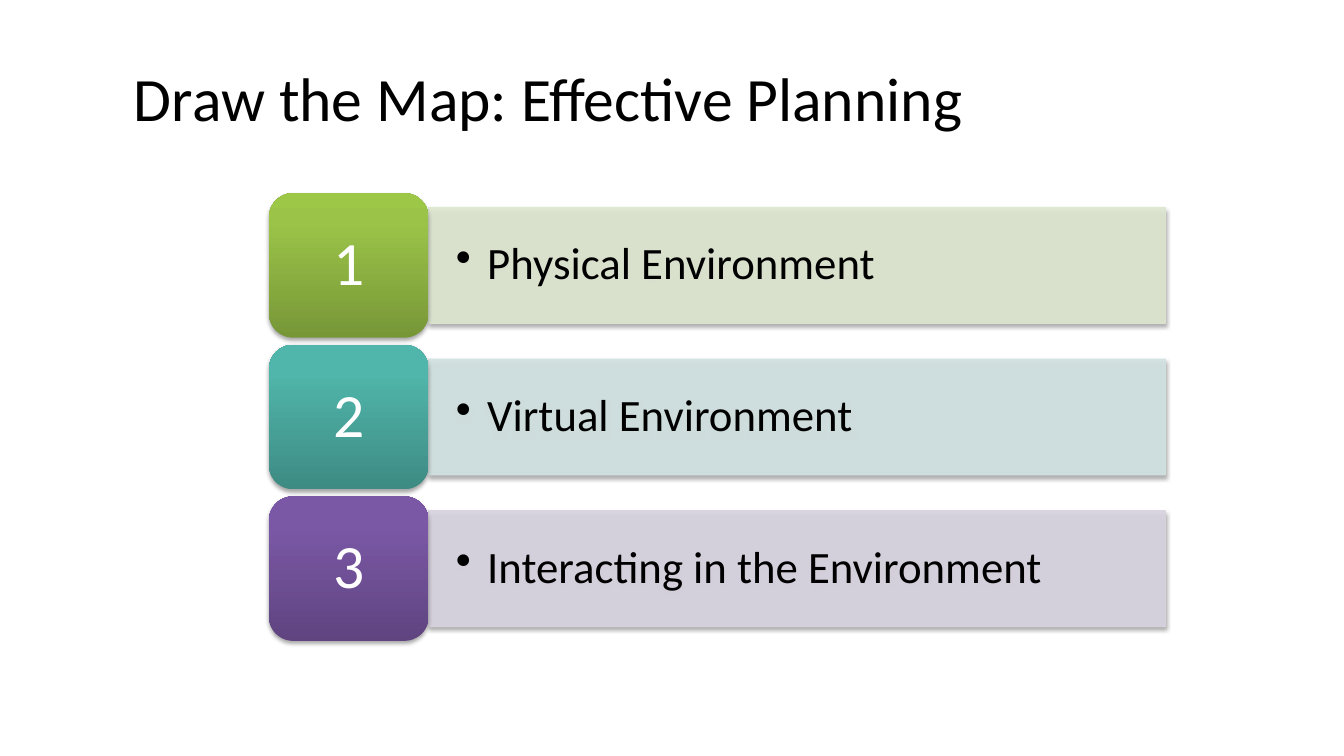
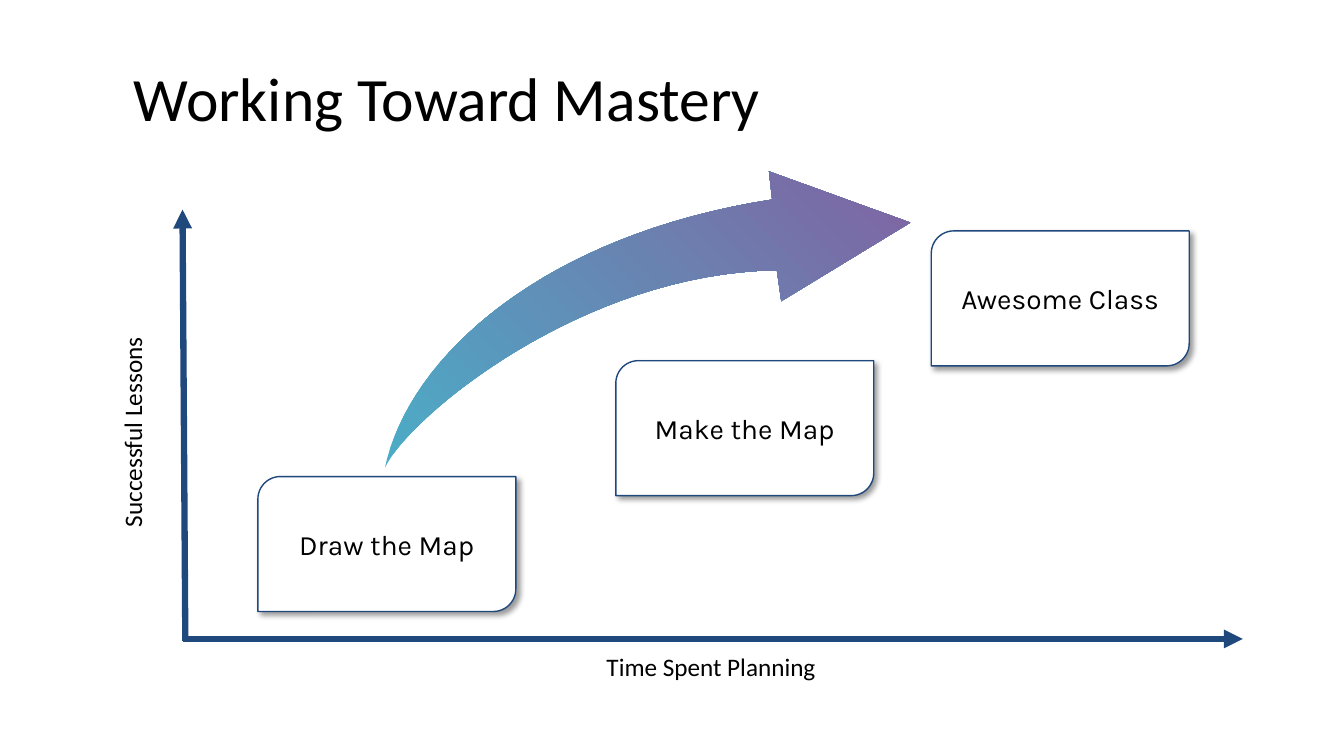
from lxml.etree import SubElement as Sub
from pptx import Presentation
from pptx.dml.color import RGBColor
from pptx.enum.shapes import MSO_CONNECTOR as Link, MSO_SHAPE as Form
from pptx.enum.text import MSO_ANCHOR as Anchor, PP_ALIGN as Align
from pptx.oxml.ns import qn
from pptx.util import Cm, Pt

BLACK = RGBColor(0x00, 0x00, 0x00)
WHITE = RGBColor(0xFF, 0xFF, 0xFF)
NAVY = RGBColor(0x1F, 0x49, 0x7D)
TEAL = RGBColor(0x4B, 0xAC, 0xC6)
PURPLE = RGBColor(0x80, 0x64, 0xA2)
LIME = [RGBColor(0x77, 0x97, 0x37), RGBColor(0x9B, 0xC3, 0x48), RGBColor(0x9D, 0xC7, 0x46)]
AQUA = [RGBColor(0x3D, 0x8B, 0x83), RGBColor(0x50, 0xB5, 0xAA), RGBColor(0x4E, 0xB8, 0xAC)]
GRAPE = [RGBColor(0x5F, 0x44, 0x80), RGBColor(0x7B, 0x58, 0xA6), RGBColor(0x7C, 0x57, 0xA8)]
PALE_LIME = RGBColor(0xDE, 0xE7, 0xD1)
PALE_AQUA = RGBColor(0xD2, 0xE3, 0xE2)
PALE_GRAPE = RGBColor(0xD8, 0xD3, 0xE0)

HEAD = {"name": "Calibri", "size": Pt(44)}
ITEM = {"name": "Calibri", "size": Pt(32)}
AXIS = {"name": "Calibri", "size": Pt(18)}
STEP = {"name": "Karla", "size": Pt(20)}


def write(shape, text, look, color=BLACK, align=Align.CENTER, **frame):
    box = shape.text_frame
    for key, val in ({"word_wrap": True} | frame).items():
        setattr(box, key, val)
    para = box.paragraphs[0]
    para.alignment = align
    run = para.add_run()
    run.text = text
    for key, val in look.items():
        setattr(run.font, key, val)
    run.font.color.rgb = color
    return para


def shade(shape, alpha, blur, dist, angle):
    shape.shadow.inherit = False
    glow = Sub(shape.element.spPr.find(qn("a:effectLst")), qn("a:outerShdw"),
               blurRad=str(Pt(blur)), dist=str(Pt(dist)),
               dir=str(angle * 60000), algn="ctr", rotWithShape="0")
    tint = Sub(glow, qn("a:srgbClr"), val=str(BLACK))
    Sub(tint, qn("a:alpha"), val=str(alpha * 1000))


deck = Presentation()
deck.slide_width, deck.slide_height = Cm(33.87), Cm(19.05)
plan, growth = [deck.slides.add_slide(deck.slide_layouts[5]) for _ in range(2)]
place = {"left": Cm(3.12), "top": Cm(0.84), "width": Cm(29.92), "height": Cm(3.18)}
for slide, text in [(plan, "Draw the Map: Effective Planning"), (growth, "Working Toward Mastery")]:
    title = slide.shapes.title
    for key, val in place.items():
        setattr(title, key, val)
    write(title, text, HEAD, align=Align.LEFT, vertical_anchor=Anchor.MIDDLE)

blends = []
rows = [
    ("Physical Environment", PALE_LIME, LIME),
    ("Virtual Environment", PALE_AQUA, AQUA),
    ("Interacting in the Environment", PALE_GRAPE, GRAPE),
]
left, top, wide, high, pitch = 6.78, 4.87, 4.02, 3.64, 3.82
thick = 2.92
for i, (text, pale, tones) in enumerate(rows):
    y = top + i * pitch
    bar = plan.shapes.add_shape(Form.RECTANGLE, Cm(left + wide), Cm(y + (high - thick) / 2),
                                Cm(18.57), Cm(thick))
    bar.fill.solid()
    bar.fill.fore_color.rgb = pale
    bar.line.color.rgb = pale
    bar.line.width = Pt(0.75)
    for tint in bar.element.spPr.iter(qn("a:srgbClr")):
        Sub(tint, qn("a:alpha"), val="90000")
    shade(bar, 35, 3.1, 1.8, 90)
    para = write(bar, text, ITEM, align=Align.LEFT, vertical_anchor=Anchor.MIDDLE,
                 margin_left=Cm(0.69), margin_right=Cm(0.69))
    para.line_spacing = 0.9
    props = para._p.get_or_add_pPr()
    props.set("marL", str(Cm(0.79)))
    props.set("indent", str(Cm(-0.79)))
    Sub(props, qn("a:buChar"), char="•")

    tile = plan.shapes.add_shape(Form.ROUNDED_RECTANGLE, Cm(left), Cm(y), Cm(wide), Cm(high))
    shade(tile, 35, 3.1, 1.8, 90)
    write(tile, str(i + 1), HEAD, WHITE, vertical_anchor=Anchor.MIDDLE).line_spacing = 0.9
    blends.append((tile, zip((0, 80, 100), tones), 90))

for x1, y1, x2, y2 in [(4.62, 16.1, 31.32, 16.1), (4.67, 16.15, 4.6, 5.28)]:
    axis = growth.shapes.add_connector(Link.STRAIGHT, Cm(x1), Cm(y1), Cm(x2), Cm(y2))
    axis.line.color.rgb = NAVY
    axis.line.width = Pt(4.5)
    Sub(axis.line._get_or_add_ln(), qn("a:tailEnd"), type="triangle")
    Sub(axis.element.spPr, qn("a:effectLst"))

names = [
    ("Time Spent Planning", 5.36, 16.28, 25.12, 1.02, 0),
    ("Successful Lessons", -1.65, 10.21, 10.31, 1.37, 270),
]
for text, x, y, w, h, turn in names:
    label = growth.shapes.add_textbox(Cm(x), Cm(y), Cm(w), Cm(h))
    label.rotation = turn
    write(label, text, AXIS)

steps = [("Draw the Map", 6.5, 12.01), ("Make the Map", 15.52, 9.09), ("Awesome Class", 23.47, 5.82)]
for text, x, y in steps:
    card = growth.shapes.add_shape(Form.ROUND_2_DIAG_RECTANGLE, Cm(x), Cm(y), Cm(6.5), Cm(3.4))
    card.fill.solid()
    card.fill.fore_color.rgb = WHITE
    card.line.color.rgb = NAVY
    card.line.width = Pt(1)
    shade(card, 40, 4, 3, 45)
    write(card, text, STEP, vertical_anchor=Anchor.MIDDLE, margin_left=Cm(0.13), margin_right=Cm(0.13))

upper = [(9.7, 11.79), (10.31, 8.97), (13.72, 5.92), (19.46, 5.03)]
tip = [(19.38, 4.32), (22.94, 5.61), (19.69, 7.59)]
lower = [(19.58, 6.81), (14.68, 6.88), (10.31, 10.49), (9.7, 11.79)]
edges = []
for a, b, c, d in (upper, lower):
    edge = []
    for k in range(33):
        t = k / 32
        s = 1 - t
        edge.append([Cm(s**3 * p + 3 * s * s * t * q + 3 * s * t * t * r + t**3 * e)
                     for p, q, r, e in zip(a, b, c, d)])
    edges.append(edge)
rise, fall = edges
outline = rise + [(Cm(x), Cm(y)) for x, y in tip] + fall
pen = growth.shapes.build_freeform(*outline[0])
pen.add_line_segments(outline[1:], close=True)
arrow = pen.convert_to_shape()
arrow.shadow.inherit = False
blends.append((arrow, [(0, TEAL), (100, PURPLE)], 45))

for shape, stops, turn in blends:
    shape.line.fill.background()
    shape.fill.gradient()
    shape.fill.gradient_angle = turn
    ramp = shape.element.spPr.find(qn("a:gradFill")).find(qn("a:gsLst"))
    for old in list(ramp):
        ramp.remove(old)
    for pos, color in stops:
        Sub(Sub(ramp, qn("a:gs"), pos=str(pos * 1000)), qn("a:srgbClr"), val=str(color))

deck.save("out.pptx")
